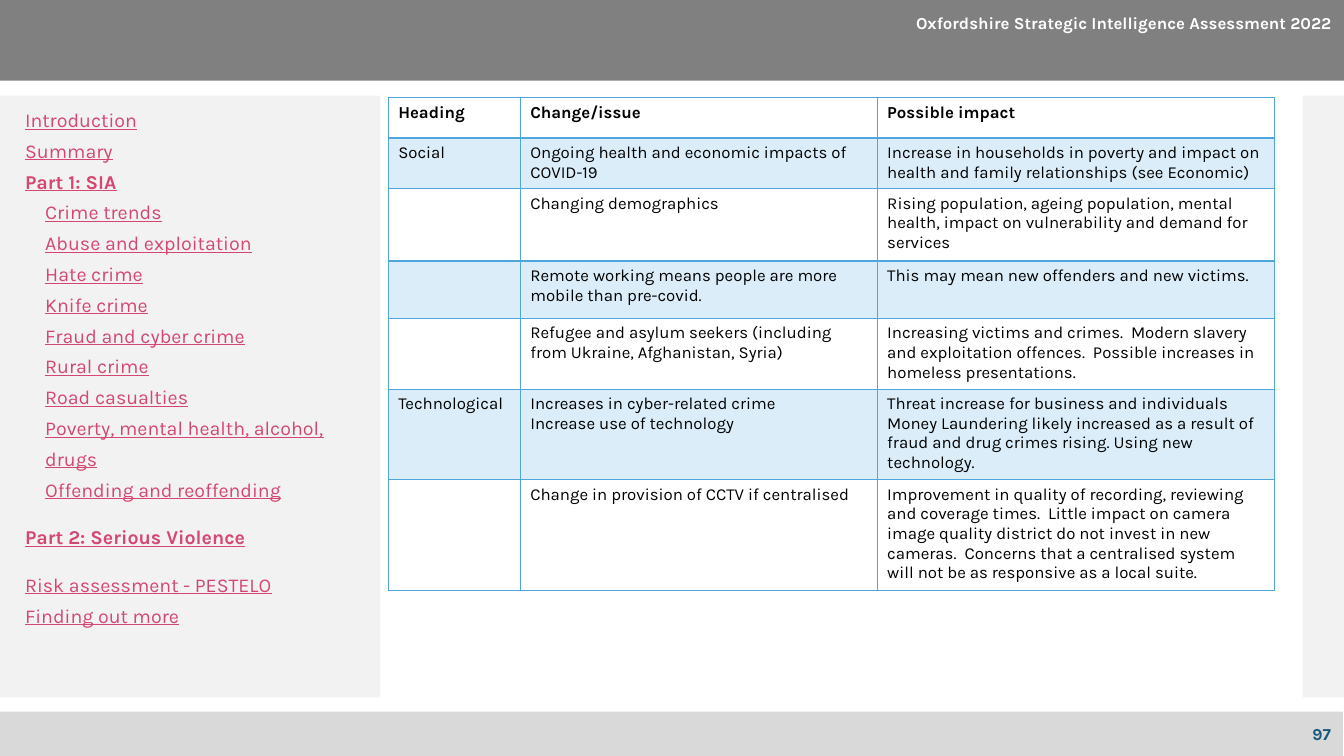
from dataclasses import dataclass

from pptx import Presentation
from pptx.dml.color import RGBColor
from pptx.enum.shapes import MSO_SHAPE as Shape
from pptx.enum.text import MSO_ANCHOR as Anchor, PP_ALIGN as Align
from pptx.oxml.ns import qn
from pptx.util import Inches, Pt
from lxml.etree import SubElement

FONT = "Karla"
BLUE, PINK, NAVY = "4EA6DC", "D54773", "19567C"
BLACK, WHITE = "000000", "FFFFFF"
CELL = Inches(0.01)  # the slide is a grid of 1333 columns by 750 rows


@dataclass(frozen=True)
class Box:
    col: int
    row: int
    cols: int
    rows: int

    def place(self) -> tuple:
        return tuple(n * CELL for n in (self.col, self.row, self.cols, self.rows))


@dataclass(frozen=True)
class Panel:
    box: Box
    color: str


@dataclass(frozen=True)
class Label:
    box: Box
    text: str
    color: str


@dataclass(frozen=True)
class Link:
    text: str
    indented: bool = False
    before: int = 0


@dataclass(frozen=True)
class Row:
    height: int
    cells: tuple
    spacing: int = 2


PANELS = [
    Panel(Box(-1, 706, 1333, 44), "D9D9D9"),
    Panel(Box(0, 0, 1333, 80), "808080"),
    Panel(Box(0, 95, 377, 597), "F2F2F2"),
    Panel(Box(1292, 95, 42, 597), "F2F2F2"),
]
LABELS = [
    Label(Box(1163, 708, 167, 40), "97", NAVY),
    Label(Box(818, 3, 513, 40), "Oxfordshire Strategic Intelligence Assessment 2022", WHITE),
]
TOPICS = [
    "Crime trends", "Abuse and exploitation", "Hate crime", "Knife crime",
    "Fraud and cyber crime", "Rural crime", "Road casualties",
    "Poverty, mental health, alcohol, drugs", "Offending and reoffending",
]
LINKS = [
    Link("Introduction\vSummary\vPart 1: SIA"),
    *(Link(topic, indented=True) for topic in TOPICS),
    Link("Part 2: Serious Violence", before=12),
    Link("Risk assessment - PESTELO", before=12),
    Link("Finding out more"),
]
COLUMNS = (131, 354, 394)
ROWS = [
    Row(40, ("Heading", "Change/issue", "Possible impact")),
    Row(50, ("Social", "Ongoing health and economic impacts of COVID-19",
             "Increase in households in poverty and impact on health and family "
             "relationships (see Economic)")),
    Row(72, ("", "Changing demographics",
             "Rising population, ageing population, mental health, impact on "
             "vulnerability and demand for services")),
    Row(57, ("", "Remote working means people are more mobile than pre-covid.",
             "This may mean new offenders and new victims.")),
    Row(70, ("", "Refugee and asylum seekers (including from Ukraine, Afghanistan, Syria)",
             "Increasing victims and crimes.  Modern slavery and exploitation offences.  "
             "Possible increases in homeless presentations.")),
    Row(90, ("Technological", "Increases in cyber-related crime\nIncrease use of technology",
             "Threat increase for business and individuals\nMoney Laundering likely increased "
             "as a result of fraud and drug crimes rising. Using new technology."), 0),
    Row(110, ("", "Change in provision of CCTV if centralised",
              "Improvement in quality of recording, reviewing and coverage times.  Little "
              "impact on camera image quality district do not invest in new cameras.  Concerns "
              "that a centralised system will not be as responsive as a local suite."), 0),
]


def rgb(color: str) -> RGBColor:
    return RGBColor.from_string(color)


def style(r, size: int, color: str, bold: bool) -> None:
    r.font.name, r.font.size, r.font.bold = FONT, Pt(size), bold
    r.font.color.rgb = rgb(color)


def add_panel(s, panel: Panel) -> None:
    sp = s.shapes.add_shape(Shape.RECTANGLE, *panel.box.place())
    sp.shadow.inherit = False
    sp.fill.solid()
    sp.fill.fore_color.rgb = rgb(panel.color)
    sp.line.fill.background()


def add_text_frame(s, box: Box):
    tf = s.shapes.add_textbox(*box.place()).text_frame
    tf.word_wrap = True
    return tf


def add_label(s, label: Label) -> None:
    tf = add_text_frame(s, label.box)
    tf.vertical_anchor = Anchor.MIDDLE
    tf.text = label.text
    p = tf.paragraphs[0]
    p.alignment = Align.RIGHT
    style(p.runs[0], 12, label.color, True)


def add_contents(s, box: Box, links: list[Link]) -> None:
    tf = add_text_frame(s, box)
    for i, link in enumerate(links):
        p = tf.add_paragraph() if i else tf.paragraphs[0]
        p.text = link.text
        p.line_spacing, p.space_before = Pt(22), Pt(link.before)
        if link.indented:
            p.level = 1
            pPr = p._p.get_or_add_pPr()
            pPr.set("marL", str(20 * CELL))
            pPr.set("indent", "0")
        for r in p.runs:
            style(r, 14, PINK, r.text.startswith("Part"))
            r.font.underline = True


def set_border(cell, side: str, width: int) -> None:
    ln = SubElement(cell._tc.get_or_add_tcPr(), qn(f"a:ln{side}"), w=str(Pt(width)))
    SubElement(SubElement(ln, qn("a:solidFill")), qn("a:srgbClr"), val=BLUE)


def fill_cell(cell, tinted: bool) -> None:
    if not tinted:
        cell.fill.background()
        return
    cell.fill.solid()
    cell.fill.fore_color.rgb = rgb(BLUE)
    clr = cell._tc.tcPr.find(f"{qn('a:solidFill')}/{qn('a:srgbClr')}")
    SubElement(clr, qn("a:alpha"), val="20000")


def add_issue_table(s, col: int, row: int) -> None:
    box = Box(col, row, sum(COLUMNS), sum(r.height for r in ROWS))
    table = s.shapes.add_table(len(ROWS), len(COLUMNS), *box.place()).table
    table.horz_banding = False
    for column, width in zip(table.columns, COLUMNS):
        column.width = width * CELL
    for i, line in enumerate(ROWS):
        table.rows[i].height = line.height * CELL
        for j, text in enumerate(line.cells):
            cell = table.cell(i, j)
            # The rule under the header row is heavier
            widths = {"L": 1, "R": 1, "T": 2 if i == 1 else 1, "B": 2 if i == 0 else 1}
            for side, width in widths.items():
                set_border(cell, side, width)
            fill_cell(cell, tinted=i % 2 == 1)
            cell.text_frame.text = text
            for p in cell.text_frame.paragraphs:
                p.space_before = p.space_after = Pt(line.spacing)
                for r in p.runs:
                    style(r, 12, BLACK, i == 0)


def main() -> None:
    prs = Presentation()
    prs.slide_width, prs.slide_height = Inches(13.33), Inches(7.5)
    s = prs.slides.add_slide(prs.slide_layouts[6])
    # Header, footer and side panels
    for panel in PANELS:
        add_panel(s, panel)
    # Page number and report title
    for label in LABELS:
        add_label(s, label)
    # Issues and their impact
    add_issue_table(s, 385, 97)
    # Contents list
    add_contents(s, Box(15, 95, 352, 594), LINKS)
    prs.save("out.pptx")


if __name__ == "__main__":
    main()
